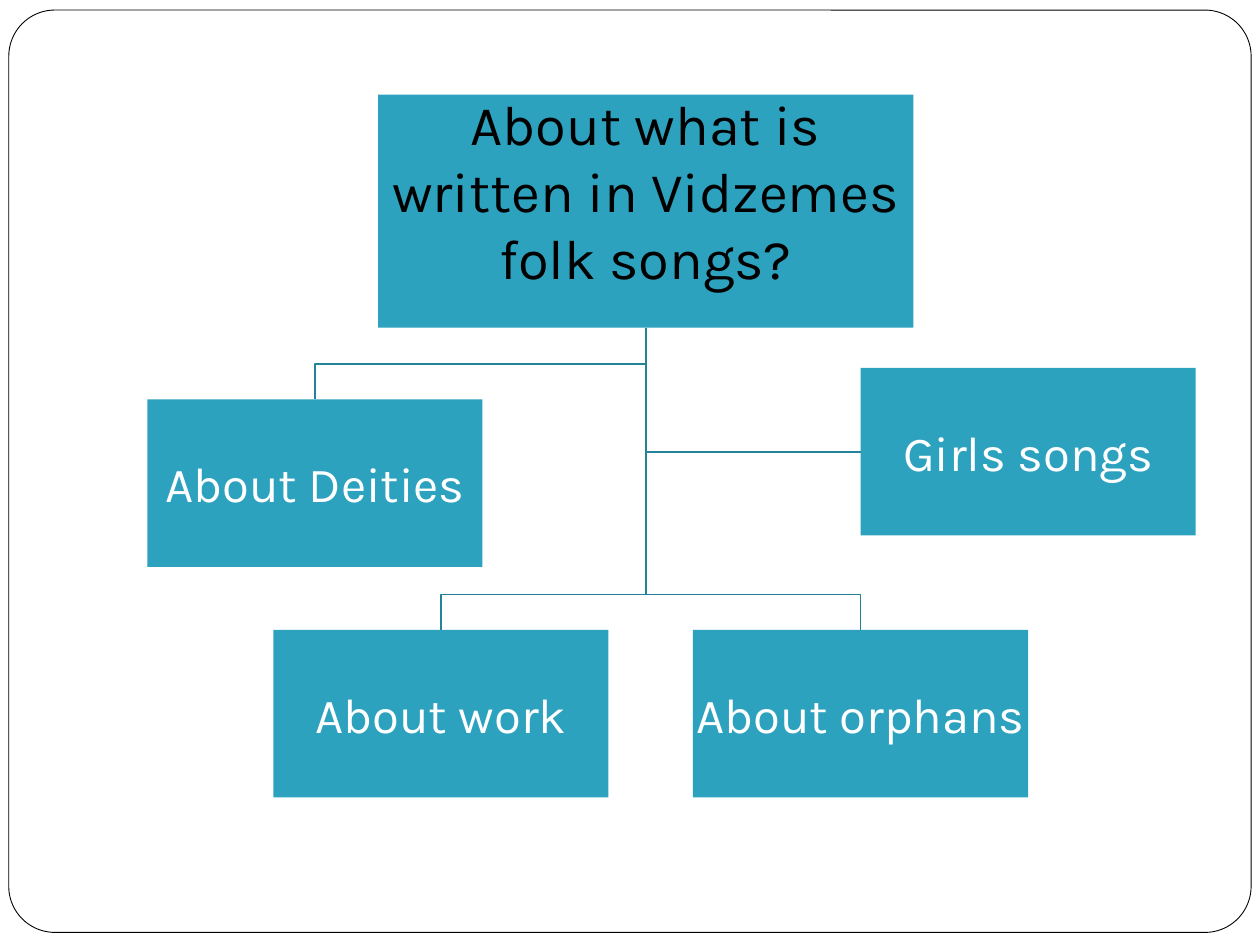
from pptx import Presentation
from pptx.dml.color import RGBColor
from pptx.enum.shapes import MSO_SHAPE
from pptx.enum.text import MSO_ANCHOR, PP_ALIGN
from pptx.util import Inches, Pt

RECTANGLE, ROUNDED = MSO_SHAPE.RECTANGLE, MSO_SHAPE.ROUNDED_RECTANGLE
MIDDLE, CENTER = MSO_ANCHOR.MIDDLE, PP_ALIGN.CENTER

COLORS = {"paper": "FFFFFF", "frame": "000000", "box": "2DA2BF",
          "branch": "248299", "question": "000000", "topic": "FFFFFF"}
FONT = "Karla"
INSET = 0.02

QUESTION = "About what is written in Vidzemes folk songs?"
QUESTION_AT = (3, 0.75, 4.25, 1.85)
QUESTION_BOTTOM_INSET = 0.35  # lifts the question above the middle of its box

TOPIC_SIZE = (2.66, 1.33)
# text, left, top, height of the branch's turn, side where the branch arrives
TOPICS = [
    ("Girls songs", 6.83, 2.92, None, "left"),
    ("About orphans", 5.5, 5, 4.72, "top"),
    ("About work", 2.17, 5, 4.72, "top"),
    ("About Deities", 1.17, 3.17, 2.89, "top"),
]


def color(name):
    return RGBColor.from_string(COLORS[name])


def add_box(slide, text, at, size, text_color, bottom_inset=INSET):
    box = slide.shapes.add_shape(RECTANGLE, *map(Inches, at))
    box.shadow.inherit = False
    box.fill.solid()
    box.fill.fore_color.rgb = color("box")
    box.line.fill.background()
    frame = box.text_frame
    frame.word_wrap = True
    frame.vertical_anchor = MIDDLE
    frame.margin_left = frame.margin_right = frame.margin_top = Inches(INSET)
    frame.margin_bottom = Inches(bottom_inset)
    paragraph = frame.paragraphs[0]
    paragraph.text = text
    paragraph.alignment = CENTER
    paragraph.font.name = FONT
    paragraph.font.size = Pt(size)
    paragraph.font.color.rgb = color(text_color)


def add_branch(slide, points):
    corners = [(Inches(x), Inches(y)) for x, y in points]
    builder = slide.shapes.build_freeform(*corners[0])
    builder.add_line_segments(corners[1:], close=False)
    branch = builder.convert_to_shape()
    branch.shadow.inherit = False
    branch.fill.background()
    branch.line.color.rgb = color("branch")
    branch.line.width = Pt(1)


def branch_points(left, top, turn, side):
    """Corners of the path from the question's bottom to a topic's side."""
    q_left, q_top, q_width, q_height = QUESTION_AT
    trunk = q_left + q_width / 2
    start = (trunk, q_top + q_height)
    width, height = TOPIC_SIZE
    if side == "left":
        middle = top + height / 2
        return [start, (trunk, middle), (left, middle)]
    center = left + width / 2
    return [start, (trunk, turn), (center, turn), (center, top)]


def main():
    deck = Presentation()
    deck.slide_width, deck.slide_height = Inches(10), Inches(7.5)
    slide = deck.slides.add_slide(deck.slide_layouts[6])

    border = slide.shapes.add_shape(
        ROUNDED, Inches(0.07), Inches(0.08), Inches(9.86), Inches(7.32))
    border.adjustments[0] = 0.05
    border.shadow.inherit = False
    border.fill.solid()
    border.fill.fore_color.rgb = color("paper")
    border.line.color.rgb = color("frame")
    border.line.width = Pt(0.5)

    for _, left, top, turn, side in TOPICS:
        add_branch(slide, branch_points(left, top, turn, side))
    add_box(slide, QUESTION, QUESTION_AT, 32, "question", QUESTION_BOTTOM_INSET)
    for text, left, top, _, _ in TOPICS:
        add_box(slide, text, (left, top, *TOPIC_SIZE), 28, "topic")

    deck.save("out.pptx")


if __name__ == "__main__":
    main()
